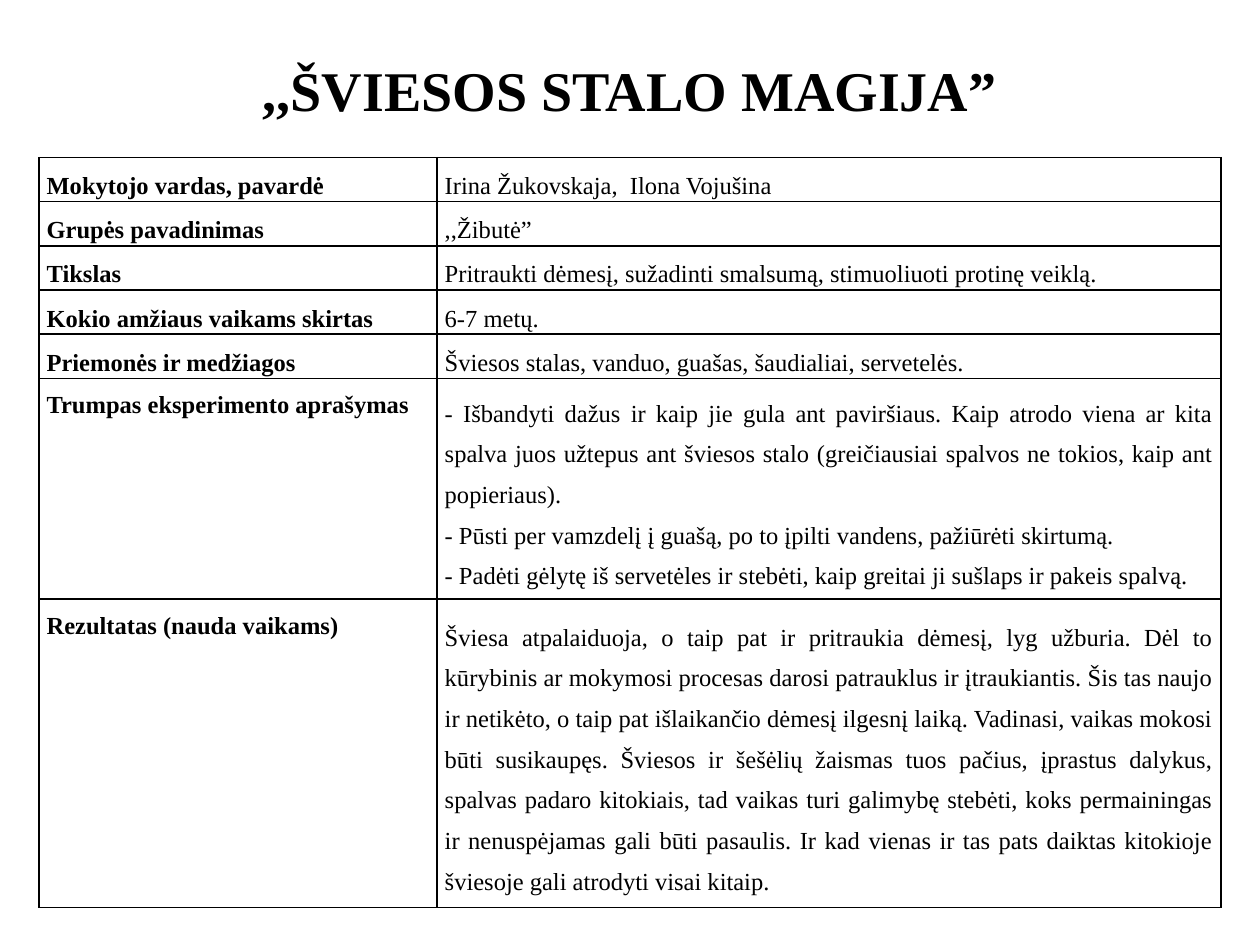
from lxml.etree import SubElement
from pptx import Presentation
from pptx.dml.color import RGBColor
from pptx.enum.text import MSO_ANCHOR, PP_ALIGN
from pptx.oxml.ns import qn
from pptx.util import Inches, Pt

COLORS = {"ink": "000000"}
FONT = "Times New Roman"
TITLE = ",,ŠVIESOS STALO MAGIJA”"
COLUMN_WIDTHS = [3.16, 6.22]
SHORT_ROW = 0.35
ROWS = [
    (SHORT_ROW, "Mokytojo vardas, pavardė", ["Irina Žukovskaja,  Ilona Vojušina"]),
    (SHORT_ROW, "Grupės pavadinimas", [",,Žibutė”"]),
    (SHORT_ROW, "Tikslas",
     ["Pritraukti dėmesį, sužadinti smalsumą, stimuoliuoti protinę veiklą."]),
    (SHORT_ROW, "Kokio amžiaus vaikams skirtas", ["6-7 metų."]),
    (SHORT_ROW, "Priemonės ir medžiagos",
     ["Šviesos stalas, vanduo, guašas, šaudialiai, servetelės."]),
    (1.75, "Trumpas eksperimento aprašymas", [
        "- Išbandyti dažus ir kaip jie gula ant paviršiaus. Kaip atrodo viena ar kita "
        "spalva juos užtepus ant šviesos stalo (greičiausiai spalvos ne tokios, kaip "
        "ant popieriaus).",
        "- Pūsti per vamzdelį į guašą, po to įpilti vandens, pažiūrėti skirtumą.",
        "- Padėti gėlytę iš servetėles ir stebėti, kaip greitai ji sušlaps ir pakeis spalvą.",
    ]),
    (2.45, "Rezultatas (nauda vaikams)", [
        "Šviesa atpalaiduoja, o taip pat ir pritraukia dėmesį, lyg užburia. Dėl to "
        "kūrybinis ar mokymosi procesas darosi patrauklus ir įtraukiantis. Šis tas naujo "
        "ir netikėto, o taip pat išlaikančio dėmesį ilgesnį laiką. Vadinasi, vaikas "
        "mokosi būti susikaupęs. Šviesos ir šešėlių žaismas tuos pačius, įprastus "
        "dalykus, spalvas padaro kitokiais, tad vaikas turi galimybę stebėti, koks "
        "permainingas ir nenuspėjamas gali būti pasaulis. Ir kad vienas ir tas pats "
        "daiktas kitokioje šviesoje gali atrodyti visai kitaip.",
    ]),
]
CELL_FORMAT = {"margin_left": Inches(0.06), "margin_right": Inches(0.06),
               "margin_top": 0, "margin_bottom": 0}


def set_all(obj, values):
    """Set each named attribute on an object."""
    for name, value in values.items():
        setattr(obj, name, value)


def write(tf, texts, size, bold, **layout):
    """Write one formatted paragraph for each text."""
    for i, text in enumerate(texts):
        p = tf.add_paragraph() if i else tf.paragraphs[0]
        set_all(p, layout)
        r = p.add_run()
        r.text = text
        set_all(r.font, {"name": FONT, "size": Pt(size), "bold": bold})
        r.font.color.rgb = RGBColor.from_string(COLORS["ink"])


def add_borders(cell):
    """Draw a thin line on the four sides of a cell."""
    tc_pr = cell._tc.get_or_add_tcPr()
    for i, side in enumerate(("lnL", "lnR", "lnT", "lnB")):
        ln = SubElement(tc_pr, qn(f"a:{side}"), w=str(Pt(1)))
        fill = SubElement(ln, qn("a:solidFill"))
        SubElement(fill, qn("a:srgbClr"), val=COLORS["ink"])
        tc_pr.remove(ln)
        tc_pr.insert(i, ln)


def add_title(s, left, top, width, height):
    """Place the centred heading in its box."""
    tf = s.shapes.add_textbox(*map(Inches, (left, top, width, height))).text_frame
    tf.word_wrap = True
    write(tf, [TITLE], 32, True, alignment=PP_ALIGN.CENTER)


def add_plan_table(s, left, top, width, height):
    """Place the activity plan with labels on the left and details on the right."""
    box = map(Inches, (left, top, width, height))
    table = s.shapes.add_table(len(ROWS), len(COLUMN_WIDTHS), *box).table
    set_all(table, {"first_row": False, "horz_banding": False})
    for column, column_width in zip(table.columns, COLUMN_WIDTHS):
        column.width = Inches(column_width)
    for row, (row_height, label, details) in zip(table.rows, ROWS):
        row.height = Inches(row_height)
        is_long = row_height > SHORT_ROW
        for cell in row.cells:
            set_all(cell, CELL_FORMAT)
            cell.vertical_anchor = MSO_ANCHOR.MIDDLE
            cell.fill.background()
            add_borders(cell)
        label_cell, detail_cell = row.cells
        if is_long:
            label_cell.vertical_anchor = MSO_ANCHOR.TOP
        write(label_cell.text_frame, [label], 14, True, line_spacing=1.5)
        write(detail_cell.text_frame, details, 14, False, line_spacing=1.5,
              alignment=PP_ALIGN.JUSTIFY if is_long else PP_ALIGN.LEFT)


def main():
    """Build the slide and save it."""
    prs = Presentation()
    set_all(prs, {"slide_width": Inches(10), "slide_height": Inches(7.5)})
    s = prs.slides.add_slide(prs.slide_layouts[6])
    add_title(s, 0, 0.39, 10, 0.64)
    add_plan_table(s, 0.31, 1.25, sum(COLUMN_WIDTHS), sum(row[0] for row in ROWS))
    prs.save("out.pptx")


if __name__ == "__main__":
    main()
